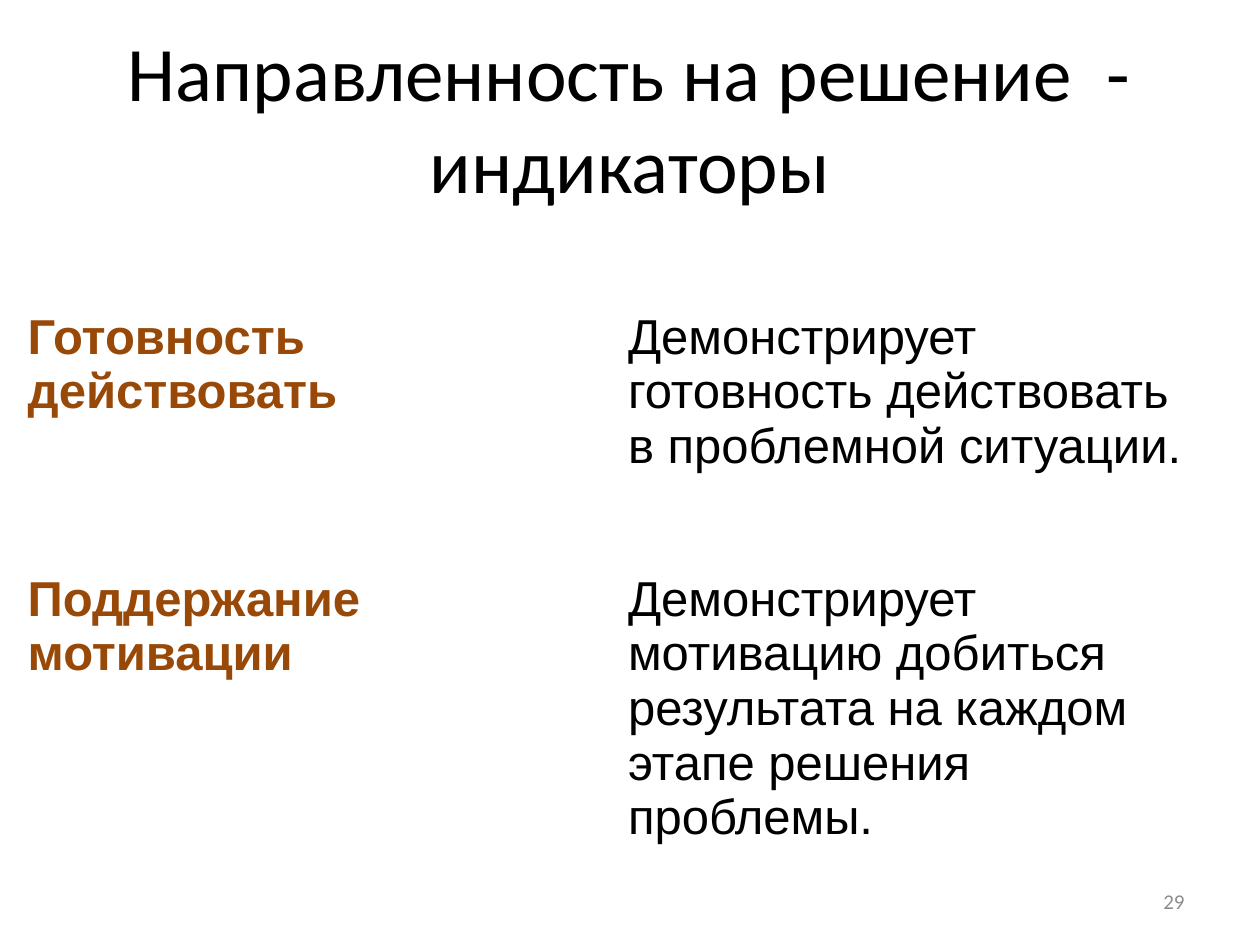
from dataclasses import dataclass

from pptx import Presentation
from pptx import util as u
from pptx.dml.color import RGBColor
from pptx.enum import text

INK = {"black": "000000", "brown": "984807", "grey": "8C8C8C"}


@dataclass
class Font:
    name: str
    size: int
    ink: str
    bold: bool = False


@dataclass
class Label:
    words: str
    box: tuple[float, float, float, float]
    font: Font
    align: text.PP_ALIGN


TERM = Font("Arial", 28, "brown", True)
SIGN = Font("Arial", 28, "black")

LABELS = [
    Label("Направленность на решение  - индикаторы", (0.5, 0.3, 9, 1.25),
          Font("Calibri", 44, "black"), text.PP_ALIGN.CENTER),
    Label("29", (7.17, 6.95, 2.33, 0.4),
          Font("Calibri", 12, "grey"), text.PP_ALIGN.RIGHT),
]

# Each row: height, term, indicator
ROWS = [
    (2.08, "Готовность действовать",
     "Демонстрирует готовность действовать в проблемной ситуации."),
    (2.73, "Поддержание мотивации",
     "Демонстрирует мотивацию добиться результата на каждом этапе "
     "решения проблемы."),
]


def write(frame, words: str, font: Font) -> None:
    frame.word_wrap = True
    par = frame.paragraphs[0]
    par.text = words
    par.font.name = font.name
    par.font.size = u.Pt(font.size)
    par.font.bold = font.bold
    par.font.color.rgb = RGBColor.from_string(INK[font.ink])


def add_label(slide, label: Label) -> None:
    box = slide.shapes.add_textbox(*map(u.Inches, label.box))
    frame = box.text_frame
    frame.vertical_anchor = text.MSO_ANCHOR.MIDDLE
    write(frame, label.words, label.font)
    frame.paragraphs[0].alignment = label.align


def add_grid(slide, left: float, top: float, width: float) -> None:
    high = sum(row[0] for row in ROWS)
    grid = slide.shapes.add_table(
        len(ROWS), 2, *map(u.Inches, (left, top, width, high))).table
    grid.first_row = grid.horz_banding = False
    for i, (tall, *words) in enumerate(ROWS):
        grid.rows[i].height = u.Inches(tall)
        for j, font in enumerate((TERM, SIGN)):
            cell = grid.cell(i, j)
            cell.fill.background()
            write(cell.text_frame, words[j], font)


def main() -> None:
    deck = Presentation()
    deck.slide_width, deck.slide_height = u.Inches(10), u.Inches(7.5)
    slide = deck.slides.add_slide(deck.slide_layouts[6])

    # Title and page number
    for label in LABELS:
        add_label(slide, label)

    # Indicators
    add_grid(slide, 0.12, 2.41, 9.53)

    deck.save("out.pptx")


if __name__ == "__main__":
    main()
